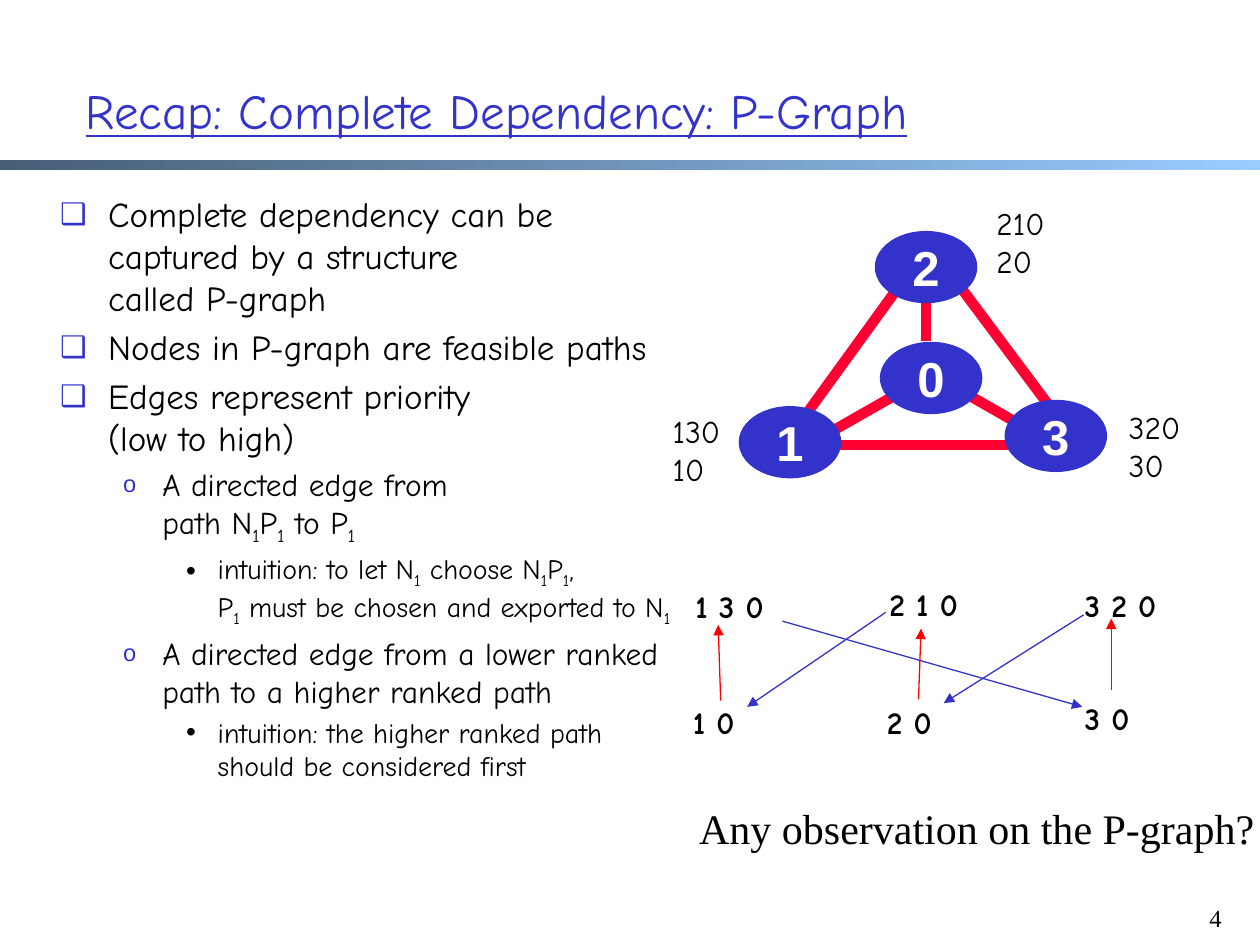
from typing import NamedTuple
from lxml import etree
from pptx import Presentation
from pptx import util as u
from pptx.dml.color import RGBColor
from pptx.enum import shapes, text
from pptx.oxml import ns

BLUE, RED, EDGE, BLACK, WHITE = "3333CC", "FF0000", "FF0033", "000000", "FFFFFF"
HAND, SERIF = "Comic Neue", "Times New Roman"
UNIT = 0.1  # the slide is a grid of 100 columns by 75 rows


class Box(NamedTuple):
    """A region, in grid columns and rows."""
    x: float
    y: float
    w: float
    h: float

    def inner(self, x, y, w, h):
        return Box(self.x + x, self.y + y, w, h)

    def emu(self):
        return [u.Inches(v * UNIT) for v in self]


def rgb(value):
    return RGBColor.from_string(value)


def sub(parent, tag, **attrs):
    return etree.SubElement(parent, ns.qn(tag), **attrs)


def add_run(p, content, size, font, color, bold=False, underline=False, base=None):
    r = p.add_run()
    r.text = content
    f = r.font
    f.size, f.name, f.bold, f.underline = u.Pt(size), font, bold, underline
    f.color.rgb = rgb(color)
    if base:
        f._element.set("baseline", str(base))


def write(p, content, size=18, font=HAND, color=BLACK, **style):
    """Fill a paragraph; a newline breaks the line and _ lowers the next character."""
    for i, line in enumerate(content.split("\n")):
        if i:
            p.add_line_break()
        first, *rest = line.split("_")
        if first:
            add_run(p, first, size, font, color, **style)
        for piece in rest:
            add_run(p, piece[0], size, font, color, base=-25000, **style)
            if piece[1:]:
                add_run(p, piece[1:], size, font, color, **style)


def add_text(s, box, *paragraphs, **style):
    tf = s.shapes.add_textbox(*box.emu()).text_frame
    tf.word_wrap = True
    for i, content in enumerate(paragraphs):
        p = tf.add_paragraph() if i else tf.paragraphs[0]
        write(p, content, **style)
    return tf


def add_line(s, box, start, end, color, width, arrow=False):
    points = [u.Inches((o + v) * UNIT) for pt in (start, end) for o, v in zip(box, pt)]
    line = s.shapes.add_connector(shapes.MSO_CONNECTOR.STRAIGHT, *points)
    line.line.color.rgb = rgb(color)
    line.line.width = u.Pt(width)
    if arrow:
        sub(line.line._get_or_add_ln(), "a:tailEnd", type="triangle")
    sub(line._element.spPr, "a:effectLst")


def header(s, box):
    rule = s.shapes.add_shape(shapes.MSO_SHAPE.RECTANGLE, *box.inner(0, 12.7, box.w, 0.8).emu())
    rule.shadow.inherit = False
    rule.line.fill.background()
    rule.fill.gradient()
    rule.fill.gradient_angle = 0
    for stop, color in zip(rule.fill.gradient_stops, ("475E76", "99CCFF")):
        stop.color.rgb = rgb(color)
    title = s.shapes.title
    title.left, title.top, title.width, title.height = box.inner(5.8, 2.5, 91.3, 12.5).emu()
    tf = title.text_frame
    tf.vertical_anchor = text.MSO_ANCHOR.MIDDLE
    p = tf.paragraphs[0]
    p.alignment = text.PP_ALIGN.LEFT
    write(p, "Recap: Complete Dependency: P-Graph", size=28, color=BLUE, underline=True)


def set_bullet(p, char, margin, hang, color, percent):
    pPr = p._p.get_or_add_pPr()
    pPr.set("marL", str(u.Inches(margin)))
    pPr.set("indent", str(-u.Inches(hang)))
    sub(sub(pPr, "a:buClr"), "a:srgbClr", val=color)
    sub(pPr, "a:buSzPct", val=str(percent * 1000))
    sub(pPr, "a:buFont", typeface="Arial")
    sub(pPr, "a:buChar", char=char)


def outline(s, box):
    # size, bullet, margin, hanging indent, bullet colour, bullet size
    levels = [(20, "❑", 0.38, 0.38, BLUE, 85),
              (18, "o", 0.81, 0.31, BLUE, 75),
              (16, "•", 1.25, 0.25, BLACK, 100)]
    items = [
        (0, "Complete dependency can be captured by a structure\ncalled P-graph"),
        (0, "Nodes in P-graph are feasible paths"),
        (0, "Edges represent priority \n(low to high)"),
        (1, "A directed edge from \npath N_1P_1 to P_1"),
        (2, "intuition: to let N_1 choose N_1P_1, \nP_1 must be chosen and exported to N_1"),
        (1, "A directed edge from a lower ranked path to a higher ranked path"),
        (2, "intuition: the higher ranked path should be considered first"),
    ]
    tf = add_text(s, box)
    for i, (level, content) in enumerate(items):
        p = tf.add_paragraph() if i else tf.paragraphs[0]
        size, *bullet = levels[level]
        p.level = level
        p.space_before = u.Pt(size * 0.2)
        set_bullet(p, *bullet)
        write(p, content, size=size)


def network(s, box):
    """Four linked nodes, with the ranked paths of the outer three."""
    edges = [((32.8, 19.8), (22.5, 6)), ((20.2, 6), (9.4, 20.9)), ((21.1, 4.4), (21.1, 12.1)),
             ((20.7, 15.2), (13.5, 19.3)), ((29.6, 19.3), (24.2, 16.2)),
             ((33.7, 20.3), (9.4, 20.3))]
    for start, end in edges:
        add_line(s, box, start, end, EDGE, 6)
    for name, x, y in [("2", 17.1, 3.4), ("0", 17.5, 12.2), ("3", 27.4, 16.8), ("1", 6.3, 17.3)]:
        node = s.shapes.add_shape(shapes.MSO_SHAPE.OVAL, *box.inner(x, y, 8, 5.6).emu())
        node.shadow.inherit = False
        node.fill.solid()
        node.fill.fore_color.rgb = node.line.color.rgb = rgb(BLUE)
        node.line.width = u.Pt(1)
        tf = node.text_frame
        tf.margin_left = tf.margin_right = tf.margin_top = tf.margin_bottom = 0
        tf.vertical_anchor = text.MSO_ANCHOR.MIDDLE
        tf.paragraphs[0].alignment = text.PP_ALIGN.CENTER
        write(tf.paragraphs[0], name, size=28, font="Arial", color=WHITE, bold=True)
    for x, y, *ranked in [(36.2, 16.9, "320", "30"), (25.7, 0.7, "210", "20"),
                          (0, 17.2, "130", "10")]:
        add_text(s, box.inner(x, y, 6.6, 7), *ranked)


def p_graph(s, box):
    labels = [("1 3 0", 0.2, 0.2), ("2 1 0", 15.6, 0), ("3 2 0", 31.1, 0.1),
              ("1 0", 0, 9.4), ("2 0", 15.4, 9.4), ("3 0", 31.1, 9.1)]
    for label, x, y in labels:
        add_text(s, box.inner(x, y, 12, 4), label, bold=True)
    arrows = {
        BLUE: [((8.1, 3.4), (31.9, 10.2)), ((16.3, 2.7), (5.3, 10.2)), ((32, 2.9), (20.9, 9.9))],
        RED: [((3.2, 9.7), (3, 3.7)), ((18.9, 9.6), (19.1, 4)), ((34.2, 8.9), (34.2, 3.2))],
    }
    for color, ends in arrows.items():
        for start, end in ends:
            add_line(s, box, start, end, color, 0.75, arrow=True)


def main():
    prs = Presentation()
    prs.slide_width, prs.slide_height = u.Inches(10), u.Inches(7.5)
    s = prs.slides.add_slide(prs.slide_layouts[5])
    header(s, Box(0, 0, 100, 15))
    outline(s, Box(3.8, 14.8, 50.4, 53.1))
    p_graph(s, Box(54, 45.9, 43.1, 13.4))
    network(s, Box(52.4, 15, 42.8, 24.2))
    add_text(s, Box(54.5, 63.2, 47.2, 5), "Any observation on the P-graph?", size=24, font=SERIF)
    add_text(s, Box(95, 71.2, 5, 5), "4", size=14, font=SERIF)
    prs.save("out.pptx")


if __name__ == "__main__":
    main()
